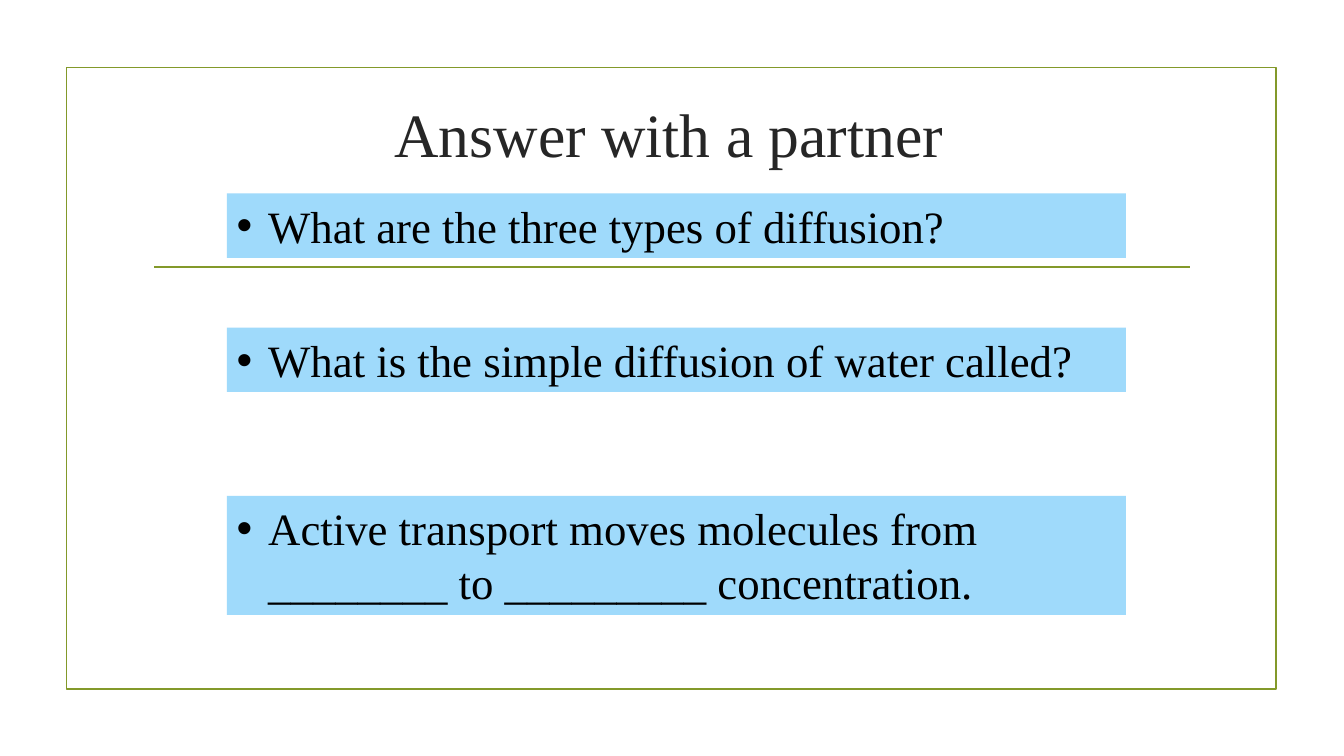
"""Build a partner question slide with a framed title and three highlighted prompts."""
from dataclasses import dataclass

from lxml import etree
from pptx import Presentation
from pptx.dml.color import RGBColor
from pptx.enum import shapes, text
from pptx.oxml import ns
from pptx.util import Pt


@dataclass(frozen=True)
class Theme:
    """Colours, font and type sizes of the slide."""
    olive: RGBColor = RGBColor(0x83, 0x99, 0x2A)
    sky: RGBColor = RGBColor(0x9F, 0xDA, 0xFB)
    charcoal: RGBColor = RGBColor(0x26, 0x26, 0x26)
    black: RGBColor = RGBColor(0, 0, 0)
    font: str = "Times New Roman"
    title_size: float = 44
    question_size: float = 32
    line_width: float = 1.25


THEME = Theme()
QUESTION_LEFT, QUESTION_WIDTH = 162, 642.2
BULLET_INDENT = 22.5
QUESTIONS = (
    (138.2, 46, "What are the three types of diffusion?"),
    (234, 46, "What is the simple diffusion of water called?"),
    (354.2, 85, "Active transport moves molecules from ________ to _________ concentration."),
)


def apply_format(target, values):
    """Set each attribute named in a dict of format values."""
    for name, value in values.items():
        setattr(target, name, value)


def write_text(paragraph, wording, size, color):
    """Write one formatted run into a paragraph."""
    run = paragraph.add_run()
    run.text = wording
    apply_format(run.font, {"name": THEME.font, "size": Pt(size)})
    run.font.color.rgb = color


def style_line(line):
    """Give an outline or rule the olive stroke."""
    line.color.rgb = THEME.olive
    line.width = Pt(THEME.line_width)


def add_rectangle(slide, left, top, width, height):
    """Add a rectangle without a shadow."""
    shape = slide.shapes.add_shape(
        shapes.MSO_SHAPE.RECTANGLE, Pt(left), Pt(top), Pt(width), Pt(height))
    shape.shadow.inherit = False
    return shape


def add_frame(slide):
    """Add the thin border around the slide content."""
    frame = add_rectangle(slide, 47.5, 48.2, 864, 444.2)
    frame.fill.background()
    style_line(frame.line)


def add_rule(slide, left, right, top):
    """Add a horizontal rule without a shadow."""
    rule = slide.shapes.add_connector(
        shapes.MSO_CONNECTOR.STRAIGHT, Pt(left), Pt(top), Pt(right), Pt(top))
    style_line(rule.line)
    etree.SubElement(rule._element.spPr, ns.qn("a:effectLst"))


def fill_title(slide, wording):
    """Place and format the title placeholder."""
    title = slide.shapes.title
    apply_format(title, {"left": Pt(100), "top": Pt(43.2), "width": Pt(756), "height": Pt(103)})
    apply_format(title.text_frame, {
        "word_wrap": True,
        "auto_size": text.MSO_AUTO_SIZE.NONE,
        "vertical_anchor": text.MSO_ANCHOR.MIDDLE,
    })
    paragraph = title.text_frame.paragraphs[0]
    paragraph.alignment = text.PP_ALIGN.CENTER
    write_text(paragraph, wording, THEME.title_size, THEME.charcoal)


def add_bullet(paragraph):
    """Give a paragraph a round bullet and a hanging indent."""
    properties = paragraph._p.get_or_add_pPr()
    properties.set("marL", str(Pt(BULLET_INDENT)))
    properties.set("indent", str(-Pt(BULLET_INDENT)))
    etree.SubElement(properties, ns.qn("a:buFont"), typeface="Arial")
    etree.SubElement(properties, ns.qn("a:buChar"), char="•")


def add_question(slide, top, height, wording):
    """Add a highlighted box with one bulleted question."""
    box = add_rectangle(slide, QUESTION_LEFT, top, QUESTION_WIDTH, height)
    box.fill.solid()
    box.fill.fore_color.rgb = THEME.sky
    box.line.fill.background()
    apply_format(box.text_frame, {
        "word_wrap": True,
        "auto_size": text.MSO_AUTO_SIZE.SHAPE_TO_FIT_TEXT,
        "vertical_anchor": text.MSO_ANCHOR.TOP,
    })
    paragraph = box.text_frame.paragraphs[0]
    paragraph.alignment = text.PP_ALIGN.LEFT
    add_bullet(paragraph)
    write_text(paragraph, wording, THEME.question_size, THEME.black)


def main():
    """Build and save the slide."""
    presentation = Presentation()
    apply_format(presentation, {"slide_width": Pt(960), "slide_height": Pt(540)})
    slide = presentation.slides.add_slide(presentation.slide_layouts.get_by_name("Title Only"))
    add_frame(slide)
    add_rule(slide, 110.2, 850.3, 190.8)
    fill_title(slide, "Answer with a partner")
    for top, height, wording in QUESTIONS:
        add_question(slide, top, height, wording)
    presentation.save("out.pptx")


if __name__ == "__main__":
    main()
